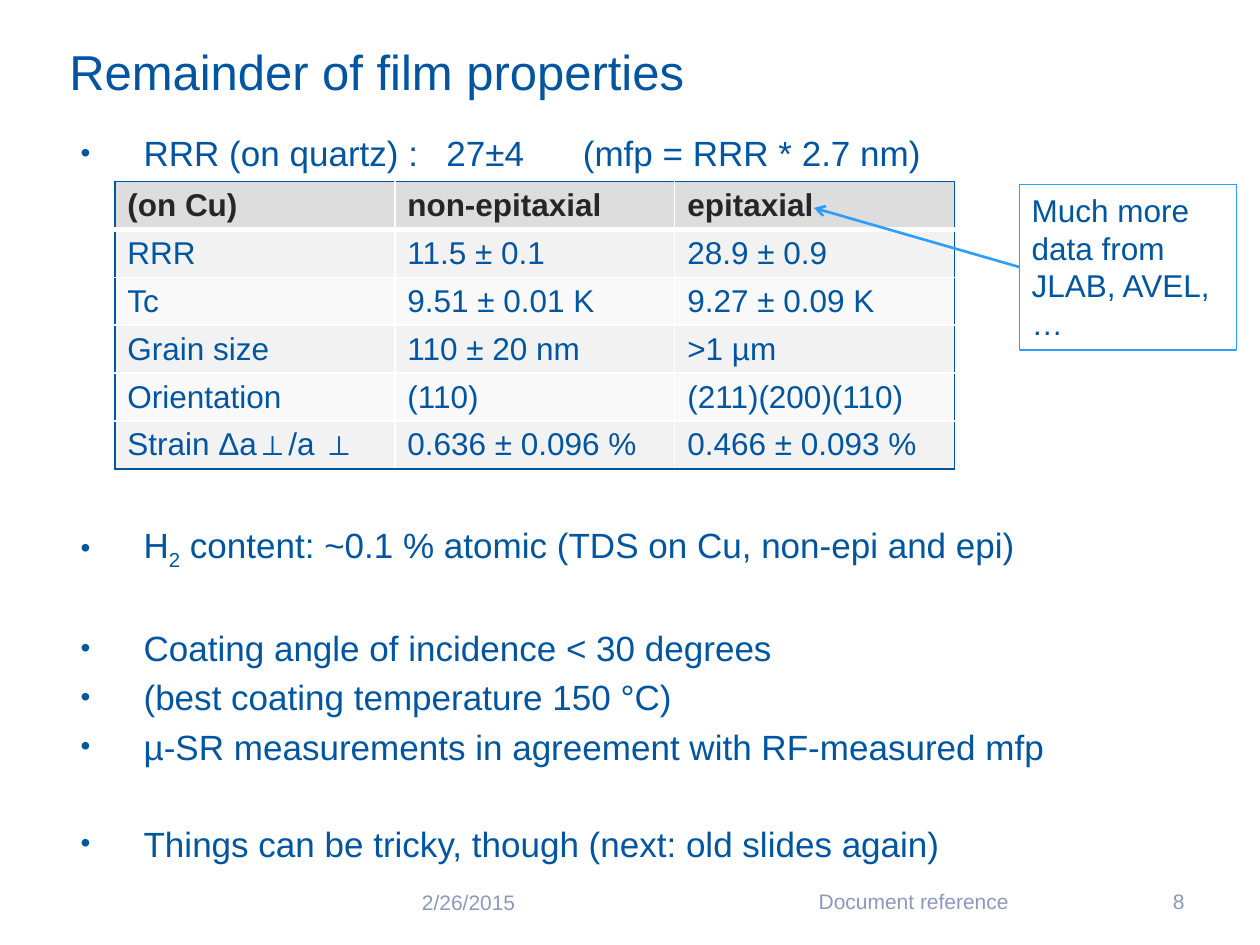
"""Build the slide on the remaining film properties."""
from lxml import etree
from pptx import Presentation
from pptx import util as u
from pptx.dml.color import RGBColor
from pptx.enum import shapes, text
from pptx.oxml.ns import qn

BLUE, SKY, MUTED, WHITE, DARK = "0055A0", "2D9DFF", "8C99BE", "FFFFFF", "262626"
HEADER_FILL, BANDS = "DDDDDD", ("F2F2F2", "F9F9F9")
LEFT, CENTER, RIGHT = text.PP_ALIGN.LEFT, text.PP_ALIGN.CENTER, text.PP_ALIGN.RIGHT
TOP, MIDDLE = text.MSO_ANCHOR.TOP, text.MSO_ANCHOR.MIDDLE

TITLE = "Remainder of film properties"
BULLETS = [
    (0, ["RRR (on quartz) :\t27±4\t(mfp = RRR * 2.7 nm)"]),
    (200, ["H", "2", " content: ~0.1 % atomic (TDS on Cu, non-epi and epi)"]),
    (31.5, ["Coating angle of incidence < 30 degrees"]),
    (4.1, ["(best coating temperature 150 °C)"]),
    (4.1, ["µ-SR measurements in agreement with RF-measured mfp"]),
    (31.5, ["Things can be tricky, though (next: old slides again)"]),
]
TAB_STOPS = (212, 290)
ROWS = [
    ("(on Cu)", "non-epitaxial", "epitaxial"),
    ("RRR", "11.5 ± 0.1", "28.9 ± 0.9"),
    ("Tc", "9.51 ± 0.01 K", "9.27 ± 0.09 K"),
    ("Grain size", "110 ± 20 nm", ">1 µm"),
    ("Orientation", "(110)", "(211)(200)(110)"),
    ("Strain Δa⊥/a ⊥", "0.636 ± 0.096 %", "0.466 ± 0.093 %"),
]
TABLE_LEFT, TABLE_TOP, COLUMN_WIDTH, ROW_HEIGHT = 65.6, 103.7, 160, 27.4
CALLOUT = ["Much more data from JLAB, AVEL,", "…"]
CALLOUT_AREA = (582.5, 105.5, 124, 94.5)
ARROW = (582.5, 152.6, 465.1, 118.8)
FOOTERS = [
    ("2/26/2015", (234, 501.1, 168, 28.8), LEFT),
    ("Document reference", (408.2, 500.7, 228, 28.8), CENTER),
    ("8", (644.4, 500.7, 39.6, 28.8), RIGHT),
]


def color(value):
    return RGBColor.from_string(value)


def points(values):
    return [u.Pt(value) for value in values]


def add_xml(parent, tag, **attributes):
    return etree.SubElement(parent, qn(tag), attributes)


def style(font, size, shade=BLUE, bold=False):
    for name, value in {"name": "Arial", "size": u.Pt(size), "bold": bold}.items():
        setattr(font, name, value)
    font.color.rgb = color(shade)


def write(para, content, size, shade=BLUE, bold=False):
    span = para.add_run()
    span.text = content
    style(span.font, size, shade, bold)
    return span


def add_box(page, area, anchor=TOP, inset=(7.2, 3.6)):
    box = page.shapes.add_textbox(*points(area))
    side, edge = points(inset)
    layout = {"word_wrap": True, "vertical_anchor": anchor, "margin_left": side,
              "margin_right": side, "margin_top": edge, "margin_bottom": edge}
    for name, value in layout.items():
        setattr(box.text_frame, name, value)
    return box


def add_bullet(para):
    props = para._p.get_or_add_pPr()
    props.set("marL", str(u.Pt(39)))
    props.set("indent", str(u.Pt(-36)))
    add_xml(add_xml(props, "a:buClr"), "a:srgbClr", val=BLUE)
    add_xml(props, "a:buSzPct", val="80000")
    add_xml(props, "a:buFont", typeface="Arial")
    add_xml(props, "a:buChar", char="•")
    tabs = add_xml(props, "a:tabLst")
    for stop in TAB_STOPS:
        add_xml(tabs, "a:tab", pos=str(u.Pt(stop)), algn="l")


def add_body(page):
    frame = add_box(page, (36, 71.8, 648, 400.3)).text_frame
    for number, (gap, parts) in enumerate(BULLETS):
        para = frame.add_paragraph() if number else frame.paragraphs[0]
        add_bullet(para)
        para.space_before = u.Pt(gap)
        for part in parts:
            span = write(para, part, 20)
            if part == "2":
                span.font._element.set("baseline", "-25000")


def set_borders(cell, borders):
    props = cell._tc.get_or_add_tcPr()
    for side, (shade, width) in borders.items():
        line = add_xml(props, f"a:ln{side}", w=str(u.Pt(width)))
        add_xml(add_xml(line, "a:solidFill"), "a:srgbClr", val=shade)


def add_properties_table(page):
    count, width = len(ROWS), len(ROWS[0])
    area = (TABLE_LEFT, TABLE_TOP, COLUMN_WIDTH * width, ROW_HEIGHT * count)
    table = page.shapes.add_table(count, width, *points(area)).table
    table.first_row = table.horz_banding = False
    for row, labels in enumerate(ROWS):
        table.rows[row].height = u.Pt(ROW_HEIGHT)
        for column, label in enumerate(labels):
            cell = table.cell(row, column)
            outer = {"L": column == 0, "R": column == width - 1,
                     "T": row == 0, "B": row == count - 1}
            borders = {side: (BLUE if edge else WHITE, 1) for side, edge in outer.items()}
            if row == 0:
                borders["B"] = (WHITE, 3)
            elif row == 1:
                borders["T"] = (WHITE, 3)
            set_borders(cell, borders)
            cell.margin_bottom = u.Pt(2)
            cell.fill.solid()
            cell.fill.fore_color.rgb = color(BANDS[(row - 1) % 2] if row else HEADER_FILL)
            write(cell.text_frame.paragraphs[0], label, 18, BLUE if row else DARK, row == 0)


def add_callout(page):
    arrow = page.shapes.add_connector(shapes.MSO_CONNECTOR.STRAIGHT, *points(ARROW))
    arrow.line.color.rgb = color(SKY)
    arrow.line.width = u.Pt(1.5)
    add_xml(arrow.line._get_or_add_ln(), "a:tailEnd", type="arrow")
    add_xml(arrow._element.spPr, "a:effectLst")
    box = add_box(page, CALLOUT_AREA)
    box.line.color.rgb = color(SKY)
    box.line.width = u.Pt(0.75)
    for number, line in enumerate(CALLOUT):
        para = box.text_frame.add_paragraph() if number else box.text_frame.paragraphs[0]
        write(para, line, 18)


def main():
    deck = Presentation()
    deck.slide_width, deck.slide_height = points((720, 540))
    page = deck.slides.add_slide(deck.slide_layouts[6])
    title = add_box(page, (36, 18.7, 648, 43.9), MIDDLE, (3.6, 3.6))
    write(title.text_frame.paragraphs[0], TITLE, 28)
    add_body(page)
    for label, area, align in FOOTERS:
        para = add_box(page, area, MIDDLE).text_frame.paragraphs[0]
        para.alignment = align
        write(para, label, 12, MUTED)
    add_properties_table(page)
    add_callout(page)
    deck.save("out.pptx")


if __name__ == "__main__":
    main()
